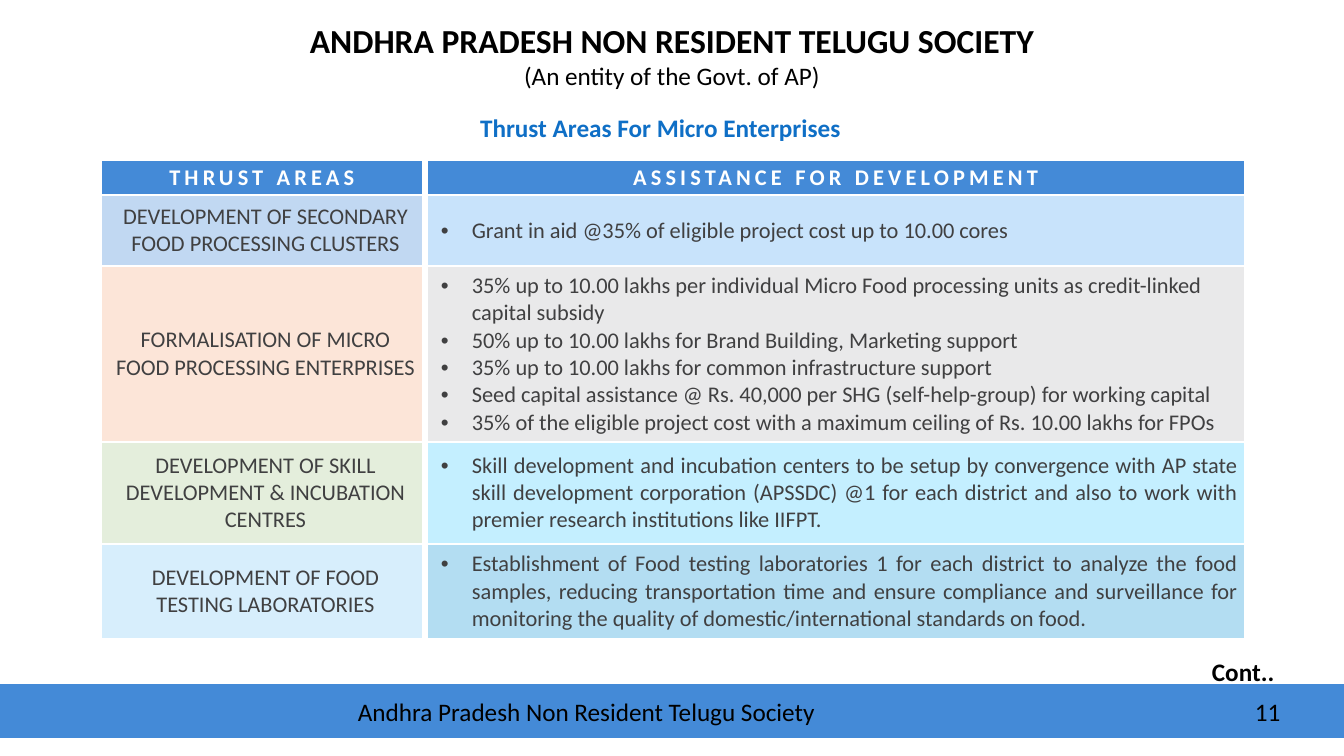
from lxml import etree
from pptx import Presentation
from pptx.dml.color import RGBColor
from pptx.enum.shapes import MSO_SHAPE
from pptx.enum.text import MSO_ANCHOR, MSO_AUTO_SIZE, PP_ALIGN
from pptx.oxml.ns import qn
from pptx.util import Pt

SCALE = 914400 / 100.8
FONT = "Calibri"
TITLE_ONLY = 5
RECTANGLE = MSO_SHAPE.RECTANGLE
MIDDLE, TOP = MSO_ANCHOR.MIDDLE, MSO_ANCHOR.TOP
NO_AUTOFIT = MSO_AUTO_SIZE.NONE
LEFT, CENTER, JUSTIFY = PP_ALIGN.LEFT, PP_ALIGN.CENTER, PP_ALIGN.JUSTIFY

WHITE = RGBColor(0xFF, 0xFF, 0xFF)
BLACK = RGBColor(0x00, 0x00, 0x00)
BLUE = RGBColor(0x44, 0x8A, 0xD7)
TITLE_BLUE = RGBColor(0x0F, 0x6F, 0xC6)
GREY_TEXT = RGBColor(0x40, 0x40, 0x41)

COLUMN_WIDTHS = [322, 4, 818]
HEADER_HEIGHT = 35
HEADINGS = ["THRUST AREAS", "ASSISTANCE FOR DEVELOPMENT"]
THRUST_AREAS = [
    (71, "DEVELOPMENT OF SECONDARY FOOD PROCESSING CLUSTERS",
     RGBColor(0xC1, 0xD8, 0xF2), RGBColor(0xC8, 0xE3, 0xFB), LEFT,
     ["Grant in aid @35% of eligible project cost up to 10.00 cores"]),
    (176, "FORMALISATION OF MICRO FOOD PROCESSING ENTERPRISES",
     RGBColor(0xFC, 0xE5, 0xD8), RGBColor(0xE9, 0xE9, 0xEA), LEFT,
     ["35% up to 10.00 lakhs per individual Micro Food processing units as "
      "credit-linked capital subsidy",
      "50% up to 10.00 lakhs for Brand Building, Marketing support",
      "35% up to 10.00 lakhs for common infrastructure support",
      "Seed capital assistance @ Rs. 40,000 per SHG (self-help-group) for "
      "working capital",
      "35% of the eligible project cost with a maximum ceiling of Rs. 10.00 "
      "lakhs for FPOs"]),
    (102, "DEVELOPMENT OF SKILL DEVELOPMENT & INCUBATION CENTRES",
     RGBColor(0xE4, 0xEE, 0xDC), RGBColor(0xC4, 0xEF, 0xFF), JUSTIFY,
     ["Skill development and incubation centers to be setup by convergence "
      "with AP state skill development corporation (APSSDC) @1 for each "
      "district and also to work with premier research institutions like "
      "IIFPT."]),
    (95, "DEVELOPMENT OF FOOD TESTING LABORATORIES",
     RGBColor(0xD7, 0xEE, 0xFC), RGBColor(0xB3, 0xDD, 0xF2), JUSTIFY,
     ["Establishment of Food testing laboratories 1 for each district to "
      "analyze the food samples, reducing transportation time and ensure "
      "compliance and surveillance for monitoring the quality of "
      "domestic/international standards on food."]),
]


def px(length):
    """Turn pixels into EMU."""
    return round(length * SCALE)


def style(paragraph, size, color, bold=False, align=LEFT):
    """Set the alignment and font of a paragraph."""
    paragraph.alignment = align
    font = paragraph.font
    font.name, font.size, font.bold = FONT, Pt(size), bold
    font.color.rgb = color


def add_label(slide, box, text, size=18, bold=False, align=LEFT, wrap=False):
    """Add a one-paragraph text box and return its frame."""
    frame = slide.shapes.add_textbox(*map(px, box)).text_frame
    frame.word_wrap = wrap
    frame.text = text
    style(frame.paragraphs[0], size, BLACK, bold, align)
    return frame


def add_banner(slide, box):
    """Add the society's name and its status line."""
    frame = add_label(slide, box, "ANDHRA PRADESH NON RESIDENT TELUGU SOCIETY",
                      24, True, CENTER, True)
    status = frame.add_paragraph()
    status.text = "(An entity of the Govt. of AP)"
    style(status, 18, BLACK, align=CENTER)


def add_title(slide, box):
    """Place and format the slide title."""
    title = slide.shapes.title
    title.left, title.top, title.width, title.height = map(px, box)
    frame = title.text_frame
    frame.text = "Thrust Areas For Micro Enterprises"
    frame.word_wrap = True
    frame.auto_size = NO_AUTOFIT
    frame.vertical_anchor = TOP
    style(frame.paragraphs[0], 18, TITLE_BLUE, True, CENTER)


def add_footer(slide, box):
    """Add the footer band with the society's name and the page number."""
    left, top, width, height = box
    band = slide.shapes.add_shape(RECTANGLE, *map(px, box))
    band.shadow.inherit = False
    band.fill.solid()
    band.fill.fore_color.rgb = BLUE
    band.line.fill.background()
    add_label(slide, (left + 348, top + 7, 483, 40),
              "Andhra Pradesh Non Resident Telugu Society")
    add_label(slide, (left + width - 99, top + 7, 50, 40), "11")


def fill_cell(cell, color, insets=(0, 0, 0, 0)):
    """Set the fill, insets and anchor of a table cell."""
    cell.fill.solid()
    cell.fill.fore_color.rgb = color
    (cell.margin_left, cell.margin_top,
     cell.margin_right, cell.margin_bottom) = map(px, insets)
    cell.vertical_anchor = MIDDLE


def add_bullet(paragraph):
    """Give a paragraph a round bullet and a hanging indent."""
    properties = paragraph._p.get_or_add_pPr()
    properties.set("marL", str(px(31)))
    properties.set("indent", str(px(-31)))
    etree.SubElement(properties, qn("a:buFont")).set("typeface", "Arial")
    etree.SubElement(properties, qn("a:buChar")).set("char", "•")


def add_thrust_table(slide, box):
    """Add the table of thrust areas and the assistance for each."""
    frame = slide.shapes.add_table(len(THRUST_AREAS) + 1, len(COLUMN_WIDTHS),
                                   *map(px, box))
    table = frame.table
    for column, width in zip(table.columns, COLUMN_WIDTHS):
        column.width = px(width)
    heights = [HEADER_HEIGHT] + [area[0] for area in THRUST_AREAS]
    for index, height in enumerate(heights):
        table.rows[index].height = px(height)
        fill_cell(table.cell(index, 1), WHITE)

    for column, heading in zip((0, 2), HEADINGS):
        cell = table.cell(0, column)
        fill_cell(cell, BLUE)
        cell.text = heading
        paragraph = cell.text_frame.paragraphs[0]
        style(paragraph, 16, WHITE, True, CENTER)
        paragraph.runs[0]._r.get_or_add_rPr().set("spc", "300")

    insets = (14, 6, 7, 6)
    for row, area in enumerate(THRUST_AREAS, start=1):
        _, name, name_fill, assistance_fill, align, points = area
        name_cell, assistance_cell = table.cell(row, 0), table.cell(row, 2)
        fill_cell(name_cell, name_fill, insets)
        name_cell.text = name
        style(name_cell.text_frame.paragraphs[0], 16, GREY_TEXT, align=CENTER)
        fill_cell(assistance_cell, assistance_fill, insets)
        assistance_cell.text = "\n".join(points)
        for paragraph in assistance_cell.text_frame.paragraphs:
            add_bullet(paragraph)
            style(paragraph, 16, GREY_TEXT, align=align)


def main():
    """Build the slide and save it."""
    presentation = Presentation()
    presentation.slide_width, presentation.slide_height = px(1344), px(756)
    slide = presentation.slides.add_slide(
        presentation.slide_layouts[TITLE_ONLY])
    add_footer(slide, (0, 684, 1344, 54))
    add_banner(slide, (0, 15, 1344, 82))
    add_thrust_table(slide, (101, 160, 1144, 479))
    add_title(slide, (294, 107, 733, 40))
    add_label(slide, (1202, 651, 83, 40), "Cont..", bold=True)
    presentation.save("out.pptx")


if __name__ == "__main__":
    main()
